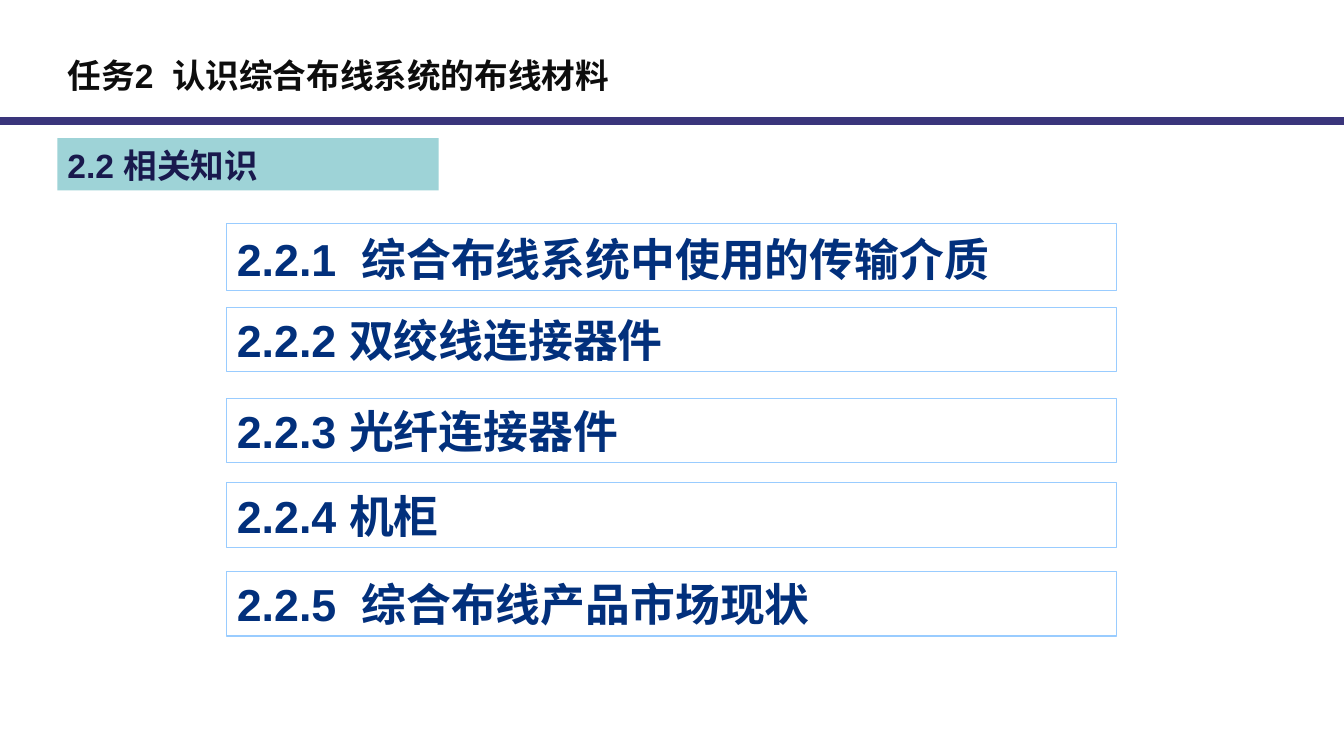
"""Build the section overview slide on structured cabling materials."""
import pptx
import pptx.dml.color
import pptx.enum.shapes
import pptx.enum.text
import pptx.oxml
import pptx.util

Inches = pptx.util.Inches

TITLE = "任务2  认识综合布线系统的布线材料"
SECTION = "2.2 相关知识"
TOPICS = [
    {"text": "2.2.1  综合布线系统中使用的传输介质", "top": 2.22, "height": 0.66, "line_spacing": 1.05},
    {"text": "2.2.2 双绞线连接器件", "top": 3.05},
    {"text": "2.2.3 光纤连接器件", "top": 3.95},
    {"text": "2.2.4 机柜", "top": 4.79},
    {"text": "2.2.5  综合布线产品市场现状", "top": 5.67},
]
THEME = {
    "font": "Arial",
    "heading_size": 24,
    "topic_size": 32,
    "title": "0D0D0D",
    "section": "19194D",
    "section_fill": "9ED3D7",
    "topic": "02307C",
    "topic_fill": "FFFFFF",
    "topic_line": "99CCFF",
    "rule": "3A357B",
}
SLIDE_WIDTH, SLIDE_HEIGHT = 13.33, 7.5
HEADING_LEFT = 0.57
TOPIC_LEFT, TOPIC_WIDTH, TOPIC_HEIGHT = 2.25, 8.82, 0.64
RULE_TOP, RULE_WEIGHT = 1.2, 5.75


def color(name):
    return pptx.dml.color.RGBColor.from_string(THEME[name])


def write_text(shape, text, *, size, ink, line_spacing=1.0):
    frame = shape.text_frame
    frame.word_wrap = True
    frame.auto_size = pptx.enum.text.MSO_AUTO_SIZE.NONE
    frame.vertical_anchor = pptx.enum.text.MSO_ANCHOR.MIDDLE
    frame.margin_left = frame.margin_right = Inches(0.1)
    frame.margin_top = frame.margin_bottom = Inches(0.05)
    paragraph = frame.paragraphs[0]
    paragraph.alignment = pptx.enum.text.PP_ALIGN.LEFT
    paragraph.line_spacing = line_spacing
    paragraph.space_before = pptx.util.Pt(0)
    run = paragraph.add_run()
    run.text = text
    run.font.name = THEME["font"]
    run.font.size = pptx.util.Pt(THEME[size])
    run.font.bold = True
    run.font.color.rgb = color(ink)


def add_box(slide, left, top, width, height, fill, line=None):
    shape = slide.shapes.add_shape(
        pptx.enum.shapes.MSO_SHAPE.RECTANGLE,
        Inches(left), Inches(top), Inches(width), Inches(height))
    shape.shadow.inherit = False
    shape.fill.solid()
    shape.fill.fore_color.rgb = color(fill)
    if line:
        shape.line.color.rgb = color(line)
        shape.line.width = pptx.util.Pt(0.75)
    else:
        shape.line.fill.background()
    return shape


def add_rule(slide):
    rule = slide.shapes.add_connector(
        pptx.enum.shapes.MSO_CONNECTOR.STRAIGHT,
        Inches(SLIDE_WIDTH), Inches(RULE_TOP), Inches(0), Inches(RULE_TOP))
    rule.line.color.rgb = color("rule")
    rule.line.width = pptx.util.Pt(RULE_WEIGHT)
    effects = pptx.oxml.parse_xml(
        '<a:effectLst xmlns:a="http://schemas.openxmlformats.org/drawingml/2006/main"/>')
    rule.element.spPr.append(effects)


def main():
    presentation = pptx.Presentation()
    presentation.slide_width = Inches(SLIDE_WIDTH)
    presentation.slide_height = Inches(SLIDE_HEIGHT)
    slide = presentation.slides.add_slide(presentation.slide_layouts[5])
    add_rule(slide)

    title = slide.shapes.title
    title.left, title.top = Inches(HEADING_LEFT), Inches(0.43)
    title.width, title.height = Inches(10.08), Inches(0.62)
    write_text(title, TITLE, size="heading_size", ink="title")

    section = add_box(slide, HEADING_LEFT, 1.37, 3.78, 0.52, "section_fill")
    write_text(section, SECTION, size="heading_size", ink="section", line_spacing=1.05)

    for topic in TOPICS:
        box = add_box(slide, TOPIC_LEFT, topic["top"], TOPIC_WIDTH,
                      topic.get("height", TOPIC_HEIGHT), "topic_fill", "topic_line")
        write_text(box, topic["text"], size="topic_size", ink="topic",
                   line_spacing=topic.get("line_spacing", 1.0))

    presentation.save("out.pptx")


if __name__ == "__main__":
    main()
